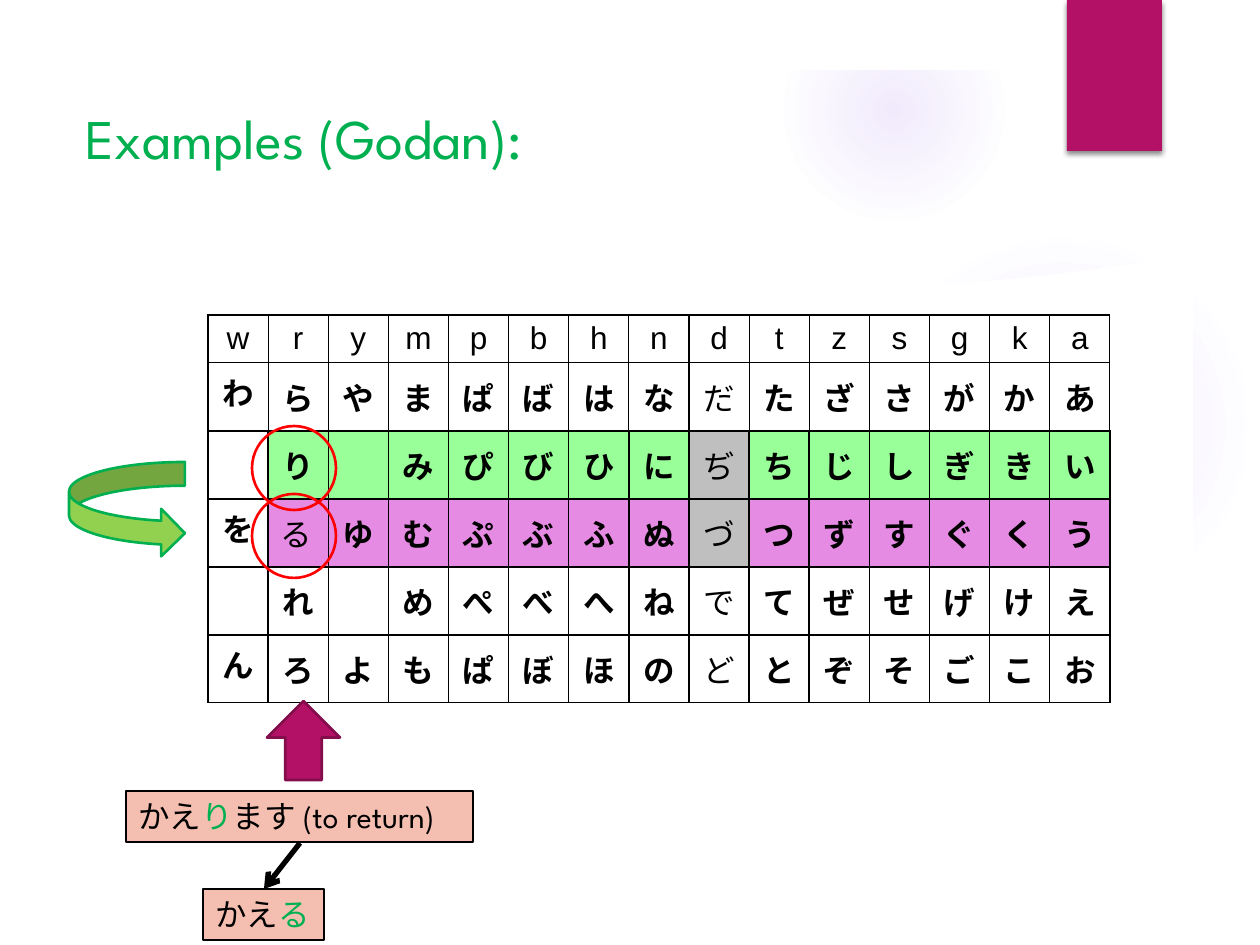
from lxml import etree
from pptx import Presentation
from pptx.dml.color import RGBColor
from pptx.enum.shapes import MSO_CONNECTOR, MSO_SHAPE
from pptx.enum.text import MSO_ANCHOR, PP_ALIGN
from pptx.oxml import parse_xml
from pptx.oxml.ns import nsdecls, qn
from pptx.util import Emu, Pt

PX = 914400 / 126
CENTER, LEFT = PP_ALIGN.CENTER, PP_ALIGN.LEFT
TOP, MIDDLE = MSO_ANCHOR.TOP, MSO_ANCHOR.MIDDLE

WHITE = RGBColor(0xFF, 0xFF, 0xFF)
BLACK = RGBColor(0, 0, 0)
GREEN = RGBColor(0x00, 0xB0, 0x50)
LIME = RGBColor(0x92, 0xD0, 0x50)
RED = RGBColor(0xFF, 0, 0)
MAGENTA = RGBColor(0xB3, 0x11, 0x66)
DARK_MAGENTA = RGBColor(0x84, 0x0D, 0x4B)
SALMON = RGBColor(0xF4, 0xBF, 0xB1)
MINT = RGBColor(0x99, 0xFF, 0x99)
ORCHID = RGBColor(0xE6, 0x8B, 0xE3)
GREY = RGBColor(0xBF, 0xBF, 0xBF)

TITLE_FONT, HEADER_FONT, KANA_FONT = "League Spartan", "Arial", "Comic Neue"

# One character per column; "-" marks an empty cell.
KANA_ROWS = [
    ("wrympbhndtzsgka", WHITE),
    ("わらやまぱばはなだたざさがかあ", WHITE),
    ("-り-みぴびひにぢちじしぎきい", MINT),
    ("をるゆむぷぶふぬづつずすぐくう", ORCHID),
    ("-れ-めぺべへねでてぜせげけえ", WHITE),
    ("んろよもぱぼほのどとぞそごこお", WHITE),
]
W_COLUMN, D_COLUMN = 0, 8
TABLE_LEFT, TABLE_TOP, TABLE_WIDTH = 208, 315, 902
HEADER_HEIGHT, ROW_HEIGHT = 47, 68

# Left, top, size, then (position, opacity) stops in percent.
GLOWS = [
    (868, 231, 388, [(0, 7), (36, 6), (69, 0)]),
    (784, 0, 220, [(0, 14), (36, 7), (73, 0)]),
]
PANEL = [(67, 256), (170, 269), (280, 280), (387, 288), (508, 294), (644, 295),
         (787, 293), (938, 286), (1040, 276), (1142, 263), (1193, 256),
         (1193, 881), (67, 881)]

LABELS = [
    ((126, 791, 347, 51), [("かえ", BLACK), ("り", GREEN), ("ます (to return)", BLACK)]),
    ((203, 889, 121, 51), [("かえ", BLACK), ("る", GREEN)]),
]


def px(value):
    return Emu(round(value * PX))


def paint(shape, fill, line=None, width=1.5):
    shape.shadow.inherit = False
    if fill is None:
        shape.fill.background()
    else:
        shape.fill.solid()
        shape.fill.fore_color.rgb = fill
    if line is None:
        shape.line.fill.background()
    else:
        shape.line.color.rgb = line
        shape.line.width = Pt(width)


def add_shape(slide, kind, box, fill, line=None, width=1.5):
    shape = slide.shapes.add_shape(kind, *map(px, box))
    paint(shape, fill, line, width)
    return shape


def add_run(paragraph, text, size, font, color, bold=False):
    run = paragraph.add_run()
    run.text = text
    run.font.size = Pt(size)
    run.font.name = font
    run.font.bold = bold
    run.font.color.rgb = color


def add_glow(slide, left, top, size, stops):
    shape = add_shape(slide, MSO_SHAPE.OVAL, (left, top, size, size), None)
    stop_xml = "".join(
        f'<a:gs pos="{position * 1000}"><a:srgbClr val="9B6BF2">'
        f'<a:alpha val="{opacity * 1000}"/></a:srgbClr></a:gs>'
        for position, opacity in stops)
    gradient = parse_xml(
        f'<a:gradFill {nsdecls("a")}><a:gsLst>{stop_xml}</a:gsLst><a:path path="circle">'
        '<a:fillToRect l="50000" t="50000" r="50000" b="50000"/></a:path></a:gradFill>')
    properties = shape._element.spPr
    properties.replace(properties.find(qn("a:noFill")), gradient)


def add_background(slide):
    for glow in GLOWS:
        add_glow(slide, *glow)
    builder = slide.shapes.build_freeform(*PANEL[0], scale=PX)
    builder.add_line_segments(PANEL[1:], close=True)
    paint(builder.convert_to_shape(), WHITE)
    add_shape(slide, MSO_SHAPE.RECTANGLE, (0, 0, 1260, 70), WHITE)

    ribbon = add_shape(slide, MSO_SHAPE.RECTANGLE, (1067, 0, 95, 151), MAGENTA)
    effects = ribbon._element.spPr.find(qn("a:effectLst"))
    effects.append(parse_xml(
        f'<a:outerShdw {nsdecls("a")} blurRad="{Pt(3)}" dist="{Pt(2)}" dir="5400000" '
        'rotWithShape="0"><a:srgbClr val="000000"><a:alpha val="45000"/>'
        '</a:srgbClr></a:outerShdw>'))


def add_borders(cell, width):
    properties = cell._tc.get_or_add_tcPr()
    for side in "LRTB":
        properties.append(parse_xml(
            f'<a:ln{side} {nsdecls("a")} w="{Pt(width)}"><a:solidFill>'
            f'<a:srgbClr val="{BLACK}"/></a:solidFill></a:ln{side}>'))


def add_kana_table(slide):
    columns = len(KANA_ROWS[0][0])
    height = HEADER_HEIGHT + ROW_HEIGHT * (len(KANA_ROWS) - 1)
    table = slide.shapes.add_table(
        len(KANA_ROWS), columns,
        *map(px, (TABLE_LEFT, TABLE_TOP, TABLE_WIDTH, height))).table
    table.first_row = table.horz_banding = False
    for column in table.columns:
        column.width = px(TABLE_WIDTH / columns)
    for row, (characters, row_color) in enumerate(KANA_ROWS):
        table.rows[row].height = px(ROW_HEIGHT if row else HEADER_HEIGHT)
        for column, character in enumerate(characters):
            cell = table.cell(row, column)
            add_borders(cell, 0.75 if row < 2 else 1)
            color = row_color
            if row_color != WHITE:
                color = {W_COLUMN: WHITE, D_COLUMN: GREY}.get(column, row_color)
            cell.fill.solid()
            cell.fill.fore_color.rgb = color
            cell.vertical_anchor = TOP if column == W_COLUMN else MIDDLE
            paragraph = cell.text_frame.paragraphs[0]
            paragraph.alignment = LEFT if character == "る" else CENTER
            if character == "-":
                continue
            font = KANA_FONT
            if row == 0 or column == D_COLUMN:
                font = HEADER_FONT
            elif character == "る":
                font = TITLE_FONT
            add_run(paragraph, character, 18, font, BLACK, bold=font == KANA_FONT)


def add_markers(slide):
    add_shape(slide, MSO_SHAPE.CURVED_RIGHT_ARROW, (69, 462, 116, 95), LIME, GREEN)
    for top in (426, 494):
        add_shape(slide, MSO_SHAPE.OVAL, (252, top, 84, 84), None, RED)
    add_shape(slide, MSO_SHAPE.UP_ARROW, (267, 701, 73, 79), MAGENTA, DARK_MAGENTA)


def add_labels(slide):
    for box, runs in LABELS:
        label = add_shape(slide, MSO_SHAPE.RECTANGLE, box, SALMON, BLACK, 0.75)
        frame = label.text_frame
        frame.word_wrap = False
        frame.vertical_anchor = TOP
        frame.paragraphs[0].alignment = LEFT
        for text, color in runs:
            add_run(frame.paragraphs[0], text, 18, TITLE_FONT, color)

    arrow = slide.shapes.add_connector(
        MSO_CONNECTOR.STRAIGHT, *map(px, (300, 843, 264, 889)))
    arrow.line.color.rgb = BLACK
    arrow.line.width = Pt(3)
    etree.SubElement(arrow.line._get_or_add_ln(), qn("a:tailEnd"), type="arrow")
    etree.SubElement(arrow._element.spPr, qn("a:effectLst"))


def main():
    presentation = Presentation()
    presentation.slide_width, presentation.slide_height = px(1260), px(945)
    slide = presentation.slides.add_slide(presentation.slide_layouts[5])
    add_background(slide)

    title = slide.shapes.title
    title.left, title.top, title.width, title.height = map(px, (73, 69, 1134, 136))
    title.text_frame.vertical_anchor = MIDDLE
    paragraph = title.text_frame.paragraphs[0]
    paragraph.alignment = LEFT
    add_run(paragraph, "Examples (Godan):", 32, TITLE_FONT, GREEN)

    add_kana_table(slide)
    add_markers(slide)
    add_labels(slide)
    presentation.save("out.pptx")


if __name__ == "__main__":
    main()
